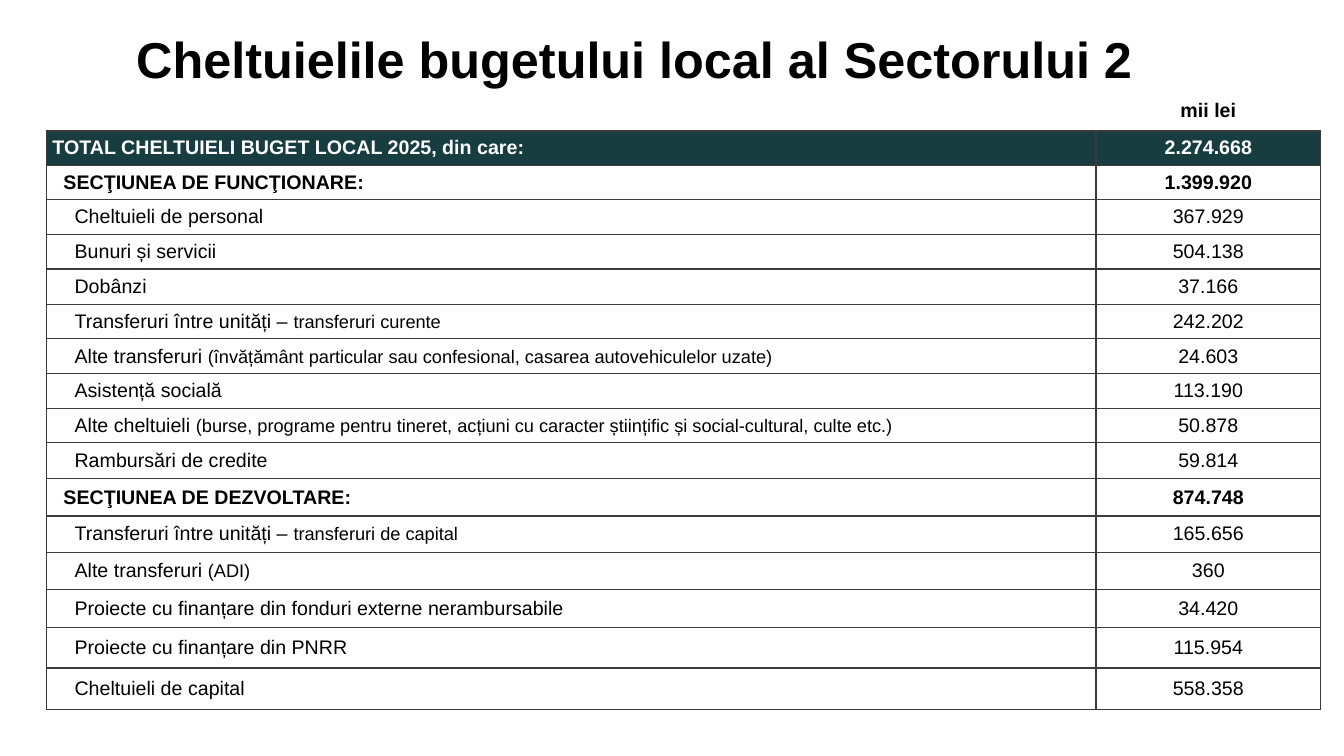
from lxml.etree import SubElement
from pptx import Presentation
from pptx.dml.color import RGBColor
from pptx.enum.text import MSO_ANCHOR, PP_ALIGN
from pptx.oxml.ns import qn
from pptx.util import Inches, Pt

INDENTS = {"total": 0.06, "section": 0.17, "item": 0.28}

EXPENSES = [
    ("total", "TOTAL CHELTUIELI BUGET LOCAL 2025, din care:", "", "2.274.668"),
    ("section", "SECŢIUNEA DE FUNCŢIONARE:", "", "1.399.920"),
    ("item", "Cheltuieli de personal", "", "367.929"),
    ("item", "Bunuri și servicii", "", "504.138"),
    ("item", "Dobânzi", "", "37.166"),
    ("item", "Transferuri între unități – ", "transferuri curente", "242.202"),
    ("item", "Alte transferuri ",
     "(învățământ particular sau confesional, casarea autovehiculelor uzate)", "24.603"),
    ("item", "Asistență socială", "", "113.190"),
    ("item", "Alte cheltuieli ",
     "(burse, programe pentru tineret, acțiuni cu caracter științific și social-cultural, culte etc.)",
     "50.878"),
    ("item", "Rambursări de credite", "", "59.814"),
    ("section", "SECŢIUNEA DE DEZVOLTARE:", "", "874.748"),
    ("item", "Transferuri între unități – ", "transferuri de capital", "165.656"),
    ("item", "Alte transferuri ", "(ADI)", "360"),
    ("item", "Proiecte cu finanțare din fonduri externe nerambursabile", "", "34.420"),
    ("item", "Proiecte cu finanțare din PNRR", "", "115.954"),
    ("item", "Cheltuieli de capital", "", "558.358"),
]
COLUMN_WIDTHS = [10.41, 2.23]
ROW_HEIGHTS = [0.4, 0.34, 0.34, 0.35, 0.34, 0.35, 0.34, 0.35, 0.34,
               0.34, 0.36, 0.37, 0.36, 0.37, 0.38, 0.4, 0.41]


def rgb(value):
    return RGBColor.from_string(value)


class BudgetSlide:
    font_name = "Arial"
    black, white, teal, grid = "000000", "FFFFFF", "173D40", "3B3B3B"
    body_size, detail_size, title_size = 14, 13, 36

    def __init__(self, presentation):
        self.slide = presentation.slides.add_slide(presentation.slide_layouts[5])

    def style(self, paragraph, size, color, bold, align=PP_ALIGN.LEFT):
        paragraph.alignment = align
        font = paragraph.font
        font.name, font.size, font.bold = self.font_name, Pt(size), bold
        font.color.rgb = rgb(color)

    def title(self, text, left, top, width, height):
        heading = self.slide.shapes.title
        heading.left, heading.top = Inches(left), Inches(top)
        heading.width, heading.height = Inches(width), Inches(height)
        frame = heading.text_frame
        frame.text = text
        frame.vertical_anchor = MSO_ANCHOR.MIDDLE
        self.style(frame.paragraphs[0], self.title_size, self.black, True)

    def borders(self, cell, outer, bottom):
        properties = cell._tc.get_or_add_tcPr()
        for side, color in (("L", outer), ("R", outer), ("T", outer), ("B", bottom)):
            line = SubElement(properties, qn(f"a:ln{side}"), w=str(Pt(1)))
            fill = SubElement(line, qn("a:solidFill"))
            SubElement(fill, qn("a:srgbClr"), val=color)

    def cell(self, cell, text, detail="", color=black, bold=False, indent=0,
             align=PP_ALIGN.LEFT, fill=None, outer=grid):
        self.borders(cell, outer, self.grid)
        if fill:
            cell.fill.solid()
            cell.fill.fore_color.rgb = rgb(fill)
        else:
            cell.fill.background()
        cell.margin_left = Inches(indent)
        cell.margin_right = cell.margin_top = cell.margin_bottom = 0
        cell.vertical_anchor = MSO_ANCHOR.MIDDLE
        paragraph = cell.text_frame.paragraphs[0]
        self.style(paragraph, self.body_size, color, bold, align)
        if text:
            paragraph.add_run().text = text
        if detail:
            note = paragraph.add_run()
            note.text = detail
            note.font.size = Pt(self.detail_size)

    def expense_table(self, left, top, unit, expenses):
        table = self.slide.shapes.add_table(
            len(ROW_HEIGHTS), len(COLUMN_WIDTHS), Inches(left), Inches(top),
            Inches(sum(COLUMN_WIDTHS)), Inches(sum(ROW_HEIGHTS))).table
        table.first_row = table.horz_banding = False
        for column, width in zip(table.columns, COLUMN_WIDTHS):
            column.width = Inches(width)
        for row, height in zip(table.rows, ROW_HEIGHTS):
            row.height = Inches(height)
        self.cell(table.cell(0, 0), "", outer=self.white)
        self.cell(table.cell(0, 1), unit, bold=True, align=PP_ALIGN.CENTER, outer=self.white)
        for index, (level, label, detail, amount) in enumerate(expenses, 1):
            is_total = level == "total"
            look = {"color": self.white if is_total else self.black,
                    "fill": self.teal if is_total else None,
                    "bold": level != "item"}
            self.cell(table.cell(index, 0), label, detail, indent=INDENTS[level], **look)
            self.cell(table.cell(index, 1), amount, align=PP_ALIGN.CENTER, **look)


def main():
    presentation = Presentation()
    presentation.slide_width, presentation.slide_height = Inches(13.33), Inches(7.5)
    budget = BudgetSlide(presentation)
    budget.title("Cheltuielile bugetului local al Sectorului 2", 1.25, 0.1, 12.08, 0.95)
    budget.expense_table(0.46, 0.9, "mii lei", EXPENSES)
    presentation.save("out.pptx")


if __name__ == "__main__":
    main()
